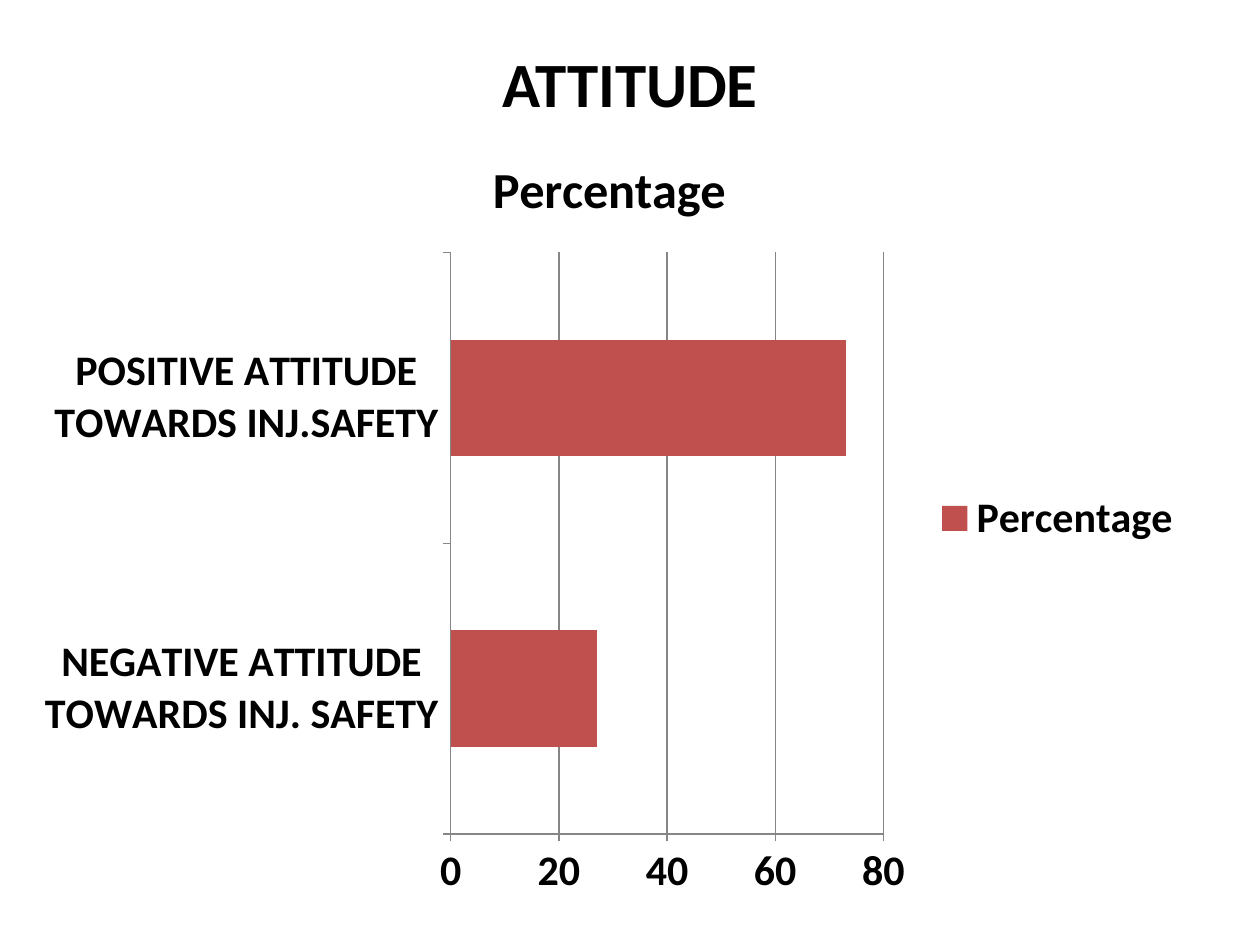
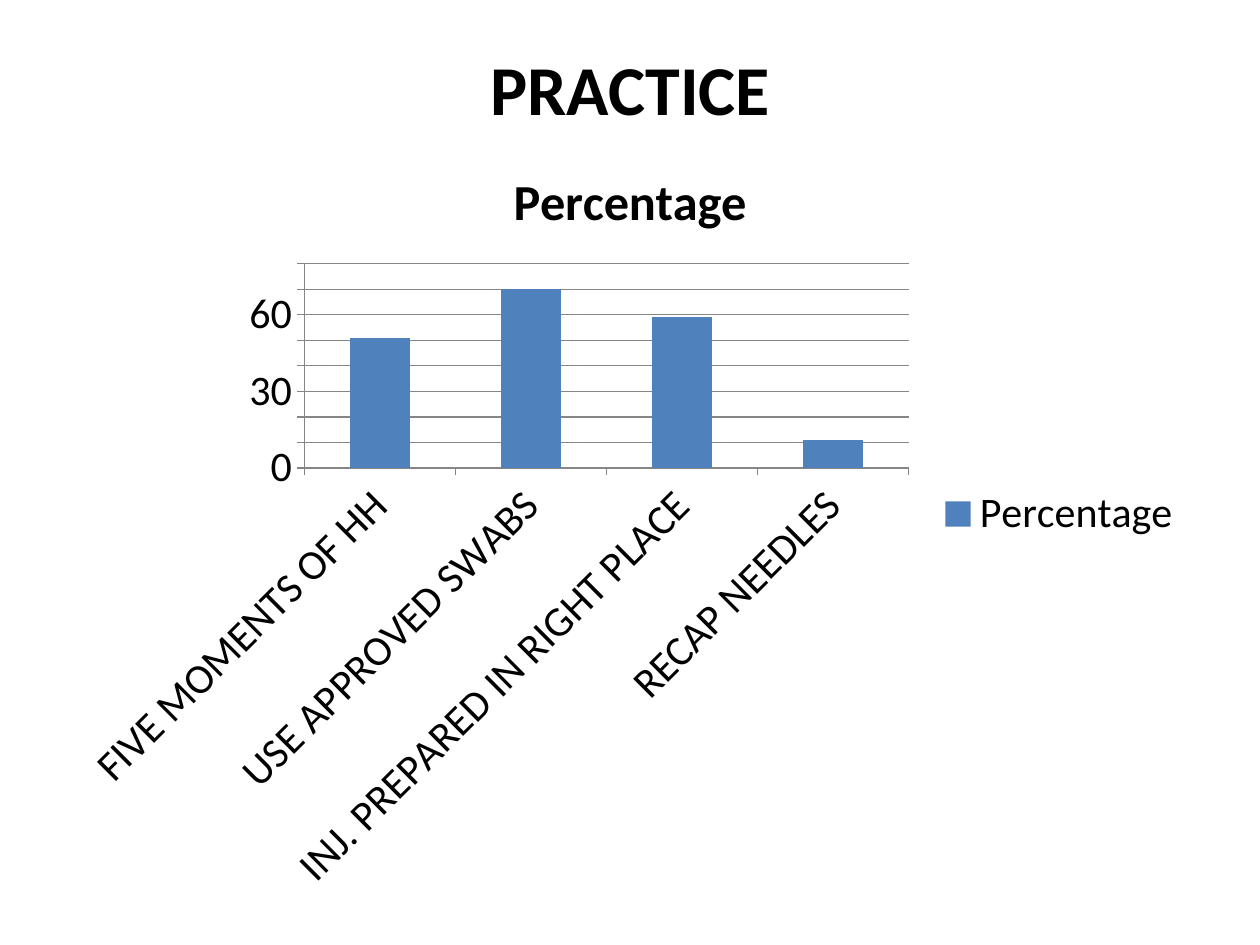
from dataclasses import dataclass

from pptx import Presentation
from pptx.chart.data import CategoryChartData
from pptx.dml.color import RGBColor
from pptx.enum.chart import XL_CHART_TYPE, XL_LEGEND_POSITION, XL_TICK_MARK
from pptx.enum.text import MSO_ANCHOR, PP_ALIGN
from pptx.util import Inches, Pt

BAR = XL_CHART_TYPE.BAR_CLUSTERED
COLUMN = XL_CHART_TYPE.COLUMN_CLUSTERED
LEGEND_RIGHT = XL_LEGEND_POSITION.RIGHT
TICK_OUT, TICK_NONE = XL_TICK_MARK.OUTSIDE, XL_TICK_MARK.NONE
BOTTOM, CENTER = MSO_ANCHOR.BOTTOM, PP_ALIGN.CENTER
TITLE_ONLY = 5


@dataclass(frozen=True)
class Theme:
    font: str = "Calibri"
    text: RGBColor = RGBColor(0x00, 0x00, 0x00)
    background: RGBColor = RGBColor(0xFF, 0xFF, 0xFF)
    axis: RGBColor = RGBColor(0x86, 0x86, 0x86)
    red: RGBColor = RGBColor(0xC0, 0x50, 0x4D)
    blue: RGBColor = RGBColor(0x4F, 0x81, 0xBD)
    chart_title: float = 28.8
    chart_text: float = 24
    axis_width: float = 0.75


@dataclass(frozen=True)
class Box:
    """Left, top, width and height in inches."""
    left: float
    top: float
    width: float
    height: float

    def emu(self) -> tuple:
        return tuple(Inches(n) for n in (self.left, self.top, self.width, self.height))


@dataclass(frozen=True)
class ChartSlide:
    title: str
    title_size: float
    title_box: Box
    kind: XL_CHART_TYPE
    chart_box: Box
    values: dict[str, float]
    color: RGBColor
    bold: bool
    major_unit: float


THEME = Theme()
SERIES = "Percentage"
AXIS_MAX = 80

SLIDES = (
    ChartSlide("ATTITUDE", 36, Box(0.5, 0.25, 9, 0.75),
               BAR, Box(0.17, 0.98, 9.33, 6.27),
               {"NEGATIVE ATTITUDE TOWARDS INJ. SAFETY": 27,
                "POSITIVE ATTITUDE TOWARDS INJ.SAFETY": 73},
               THEME.red, bold=True, major_unit=20),
    ChartSlide("PRACTICE", 40, Box(0.5, 0.3, 9, 0.78),
               COLUMN, Box(0.5, 1.08, 9, 6),
               {"FIVE MOMENTS OF HH": 51,
                "USE APPROVED SWABS": 70,
                "INJ. PREPARED IN RIGHT PLACE": 59,
                "RECAP NEEDLES": 11},
               THEME.blue, bold=False, major_unit=10),
)


def set_font(font, size: float, bold: bool) -> None:
    font.name, font.size, font.bold = THEME.font, Pt(size), bold
    font.color.rgb = THEME.text


def set_line(line) -> None:
    line.color.rgb = THEME.axis
    line.width = Pt(THEME.axis_width)


def add_title(slide, item: ChartSlide) -> None:
    sp = slide.shapes.title
    sp.left, sp.top, sp.width, sp.height = item.title_box.emu()
    tf = sp.text_frame
    tf.text = item.title
    tf.vertical_anchor = BOTTOM
    p = tf.paragraphs[0]
    p.alignment = CENTER
    set_font(p.font, item.title_size, True)


def style_axes(chart, major_unit: float) -> None:
    for axis in (chart.category_axis, chart.value_axis):
        axis.major_tick_mark, axis.minor_tick_mark = TICK_OUT, TICK_NONE
        set_line(axis.format.line)
    values = chart.value_axis
    values.minimum_scale, values.maximum_scale = 0, AXIS_MAX
    values.major_unit = major_unit
    values.has_major_gridlines = True
    set_line(values.major_gridlines.format.line)


def add_chart(slide, item: ChartSlide) -> None:
    data = CategoryChartData()
    data.categories = list(item.values)
    data.add_series(SERIES, list(item.values.values()))
    chart = slide.shapes.add_chart(item.kind, *item.chart_box.emu(), data).chart
    set_font(chart.font, THEME.chart_text, item.bold)

    chart.has_title = True
    tf = chart.chart_title.text_frame
    tf.text = SERIES
    set_font(tf.paragraphs[0].font, THEME.chart_title, True)
    chart.chart_title.include_in_layout = False

    chart.has_legend = True
    chart.legend.position = LEGEND_RIGHT
    chart.legend.include_in_layout = False

    style_axes(chart, item.major_unit)
    plot = chart.plots[0]
    plot.gap_width = 150
    plot.vary_by_categories = False
    fill = plot.series[0].format.fill
    fill.solid()
    fill.fore_color.rgb = item.color


def main() -> None:
    prs = Presentation()
    prs.slide_width, prs.slide_height = Inches(10), Inches(7.5)
    background = prs.slide_master.background.fill
    background.solid()
    background.fore_color.rgb = THEME.background
    for item in SLIDES:
        slide = prs.slides.add_slide(prs.slide_layouts[TITLE_ONLY])
        add_title(slide, item)
        add_chart(slide, item)
    prs.save("out.pptx")


if __name__ == "__main__":
    main()
